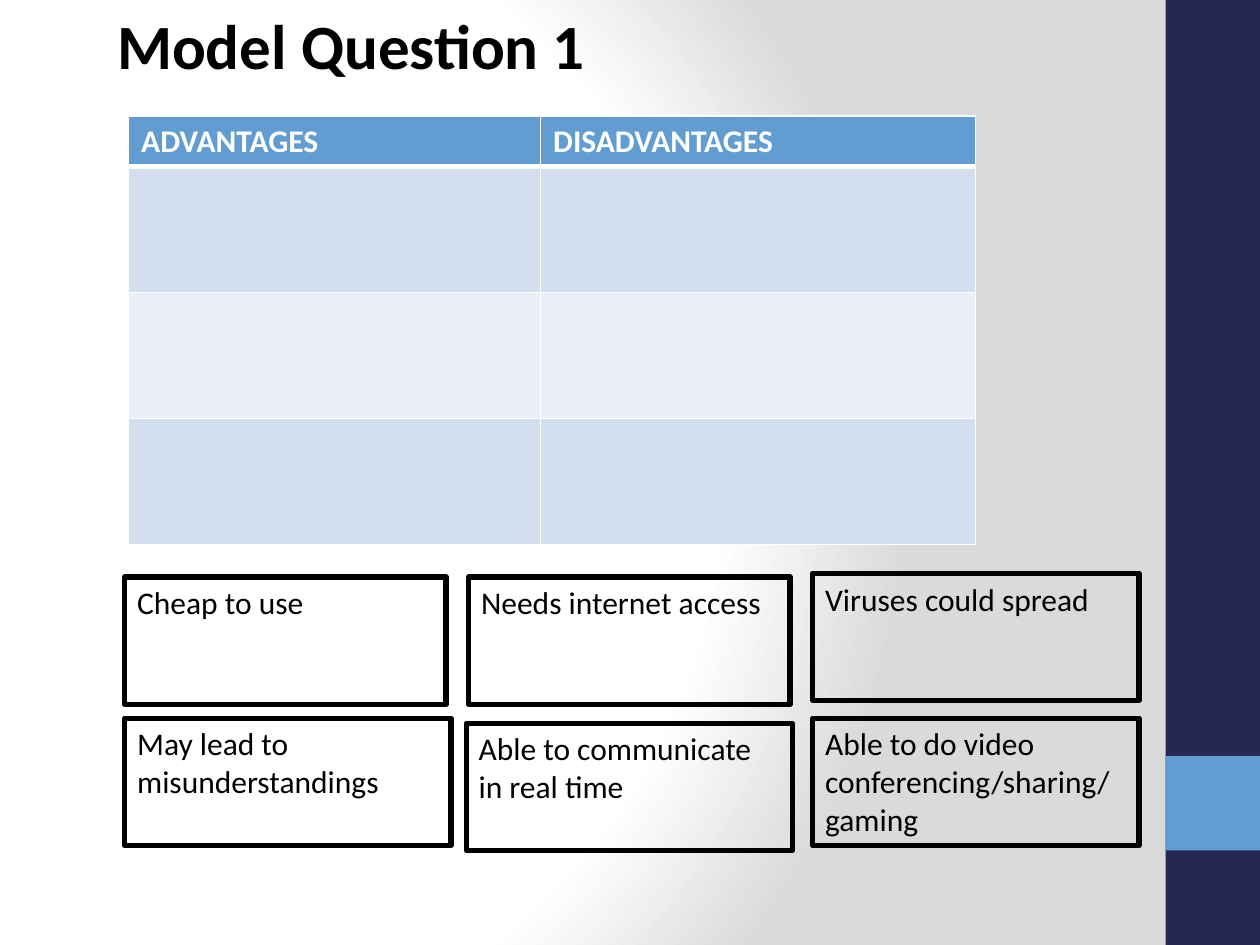
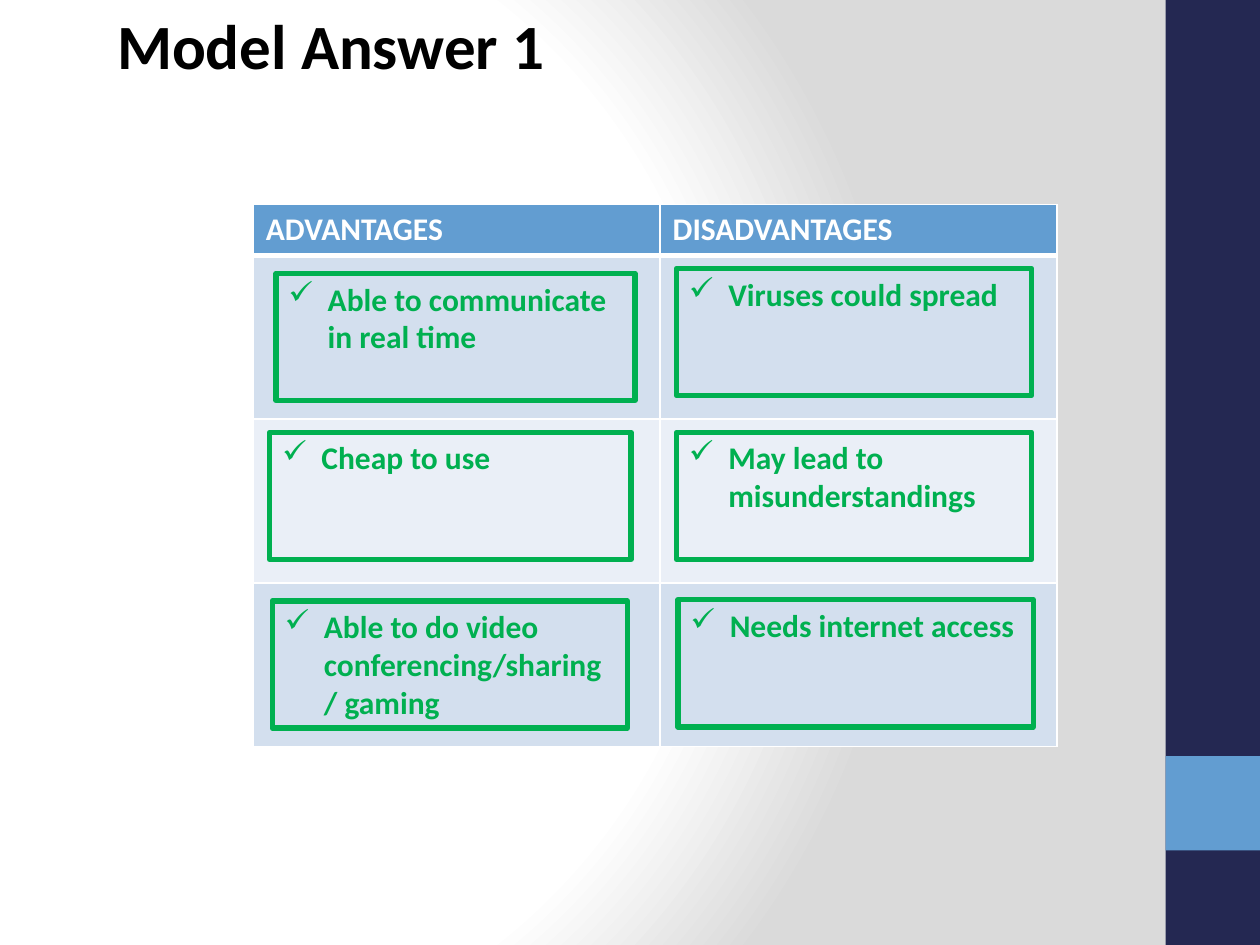
from lxml import etree
from pptx import Presentation
from pptx import util as u
from pptx.dml import color
from pptx.enum import shapes, text
from pptx.oxml import ns, parse_xml

FONT = "Calibri"
BLACK, WHITE, GREEN = "000000", "FFFFFF", "00B050"
NAVY, BLUE = "242852", "629DD1"
ROW_FILLS = [BLUE, "D3DFEE", "EAEFF7", "D3DFEE"]
HEADINGS = ["ADVANTAGES", "DISADVANTAGES"]
BANDS = [(NAVY, 0, 540), (BLUE, 432, 54)]
BACKGROUND_STOPS = [(0, WHITE), (75, WHITE), (100, "DADADA")]
HEADER_HEIGHT, BOX_HEIGHT = 29, 72.72

SLIDES = [
    {
        "title": "Model Question 1",
        "table": (73.5, 66.2), "columns": (235.4, 248.4), "row": 72,
        "color": BLACK, "ticked": False,
        "boxes": [
            ("Able to communicate in real time", 266.4, 413.3, 186.5),
            ("Viruses could spread", 464.4, 327.6, 186.5),
            ("Needs internet access", 267.85, 329.75, 183.6),
            ("May lead to misunderstandings", 71.3, 410.4, 186.5),
            ("Able to do video conferencing/sharing/ gaming", 464.4, 410.4, 186.5),
            ("Cheap to use", 71.3, 329.75, 183.6),
        ],
    },
    {
        "title": "Model Answer 1",
        "table": (144.7, 116.9), "columns": (232.5, 226.8), "row": 93.6,
        "color": GREEN, "ticked": True,
        "boxes": [
            ("Able to communicate in real time", 157.7, 156.2, 205.2),
            ("Viruses could spread", 386.6, 153.4, 203),
            ("Needs internet access", 387.4, 342.7, 203),
            ("May lead to misunderstandings", 386.6, 247, 203),
            ("Able to do video conferencing/sharing/ gaming", 155.5, 343.4, 203),
            ("Cheap to use", 154.1, 247, 206.6),
        ],
    },
]


def rgb(value):
    return color.RGBColor.from_string(value)


def points(*values):
    return [u.Pt(value) for value in values]


def write(frame, words, size, ink, bold):
    frame.word_wrap = True
    frame.vertical_anchor = text.MSO_ANCHOR.TOP
    paragraph = frame.paragraphs[0]
    paragraph.alignment = text.PP_ALIGN.LEFT
    run = paragraph.add_run()
    run.text = words
    run.font.name, run.font.size, run.font.bold = FONT, u.Pt(size), bold
    run.font.color.rgb = rgb(ink)
    return paragraph


def add_tick(paragraph):
    properties = paragraph._p.get_or_add_pPr()
    properties.set("marL", str(u.Pt(22.5)))
    properties.set("indent", str(-u.Pt(22.5)))
    etree.SubElement(properties, ns.qn("a:buChar")).set("char", "✓")


def set_background(master):
    master.background.fill.solid()
    solid = master.element.xpath("p:cSld/p:bg/p:bgPr/a:solidFill")[0]
    stops = "".join(
        f'<a:gs pos="{place * 1000}"><a:srgbClr val="{value}"/></a:gs>'
        for place, value in BACKGROUND_STOPS)
    gradient = parse_xml(
        f'<a:gradFill {ns.nsdecls("a")} rotWithShape="1"><a:gsLst>{stops}</a:gsLst>'
        '<a:path path="circle"><a:fillToRect l="20000" t="50000" r="100000" b="50000"/>'
        '</a:path></a:gradFill>')
    solid.getparent().replace(solid, gradient)


def add_rectangle(slide, left, top, width, height):
    shape = slide.shapes.add_shape(
        shapes.MSO_SHAPE.RECTANGLE, *points(left, top, width, height))
    shape.shadow.inherit = False
    return shape


def add_bands(slide):
    for fill, top, height in BANDS:
        band = add_rectangle(slide, 666, top, 54, height)
        band.fill.solid()
        band.fill.fore_color.rgb = rgb(fill)
        band.line.fill.background()


def add_title(slide, words):
    title = slide.shapes.add_textbox(*points(59.8, 0, 601.2, 94))
    write(title.text_frame, words, 36, BLACK, True)


def set_borders(cell, widths):
    properties = cell._tc.get_or_add_tcPr()
    for position, (side, width) in enumerate(widths.items()):
        properties.insert(position, parse_xml(
            f'<a:{side} {ns.nsdecls("a")} w="{u.Pt(width)}"><a:solidFill>'
            f'<a:srgbClr val="{WHITE}"/></a:solidFill></a:{side}>'))


def add_comparison_table(slide, origin, columns, row_height):
    heights = [HEADER_HEIGHT] + [row_height] * 3
    table = slide.shapes.add_table(
        len(heights), len(columns),
        *points(*origin, sum(columns), sum(heights))).table
    table.horz_banding = False
    for column, width in zip(table.columns, columns):
        column.width = u.Pt(width)
    for index, (row, height) in enumerate(zip(table.rows, heights)):
        row.height = u.Pt(height)
        for cell in row.cells:
            cell.fill.solid()
            cell.fill.fore_color.rgb = rgb(ROW_FILLS[index])
            set_borders(cell, {"lnL": 1, "lnR": 1,
                               "lnT": 3 if index == 1 else 1,
                               "lnB": 3 if index == 0 else 1})
    for cell, heading in zip(table.rows[0].cells, HEADINGS):
        write(cell.text_frame, heading, 18, WHITE, True)


def add_statement(slide, words, left, top, width, ink, ticked):
    box = add_rectangle(slide, left, top, width, BOX_HEIGHT)
    box.fill.background()
    box.line.color.rgb = rgb(ink)
    box.line.width = u.Pt(3)
    etree.SubElement(box.line._get_or_add_ln(), ns.qn("a:round"))
    paragraph = write(box.text_frame, words, 18, ink, ticked)
    if ticked:
        add_tick(paragraph)


def main():
    presentation = Presentation()
    presentation.slide_width, presentation.slide_height = points(720, 540)
    set_background(presentation.slide_master)
    for content in SLIDES:
        slide = presentation.slides.add_slide(presentation.slide_layouts[6])
        add_bands(slide)
        add_title(slide, content["title"])
        add_comparison_table(
            slide, content["table"], content["columns"], content["row"])
        for box in content["boxes"]:
            add_statement(slide, *box, content["color"], content["ticked"])
    presentation.save("out.pptx")


if __name__ == "__main__":
    main()
